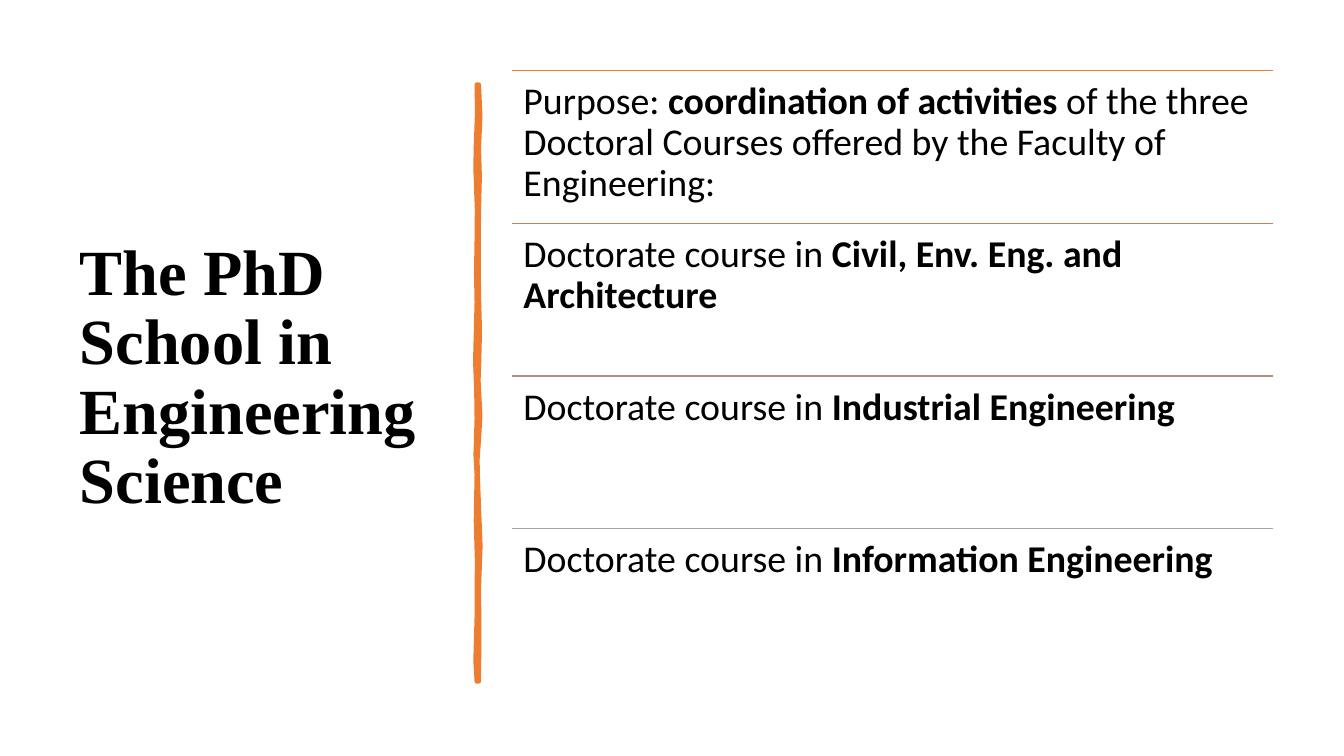
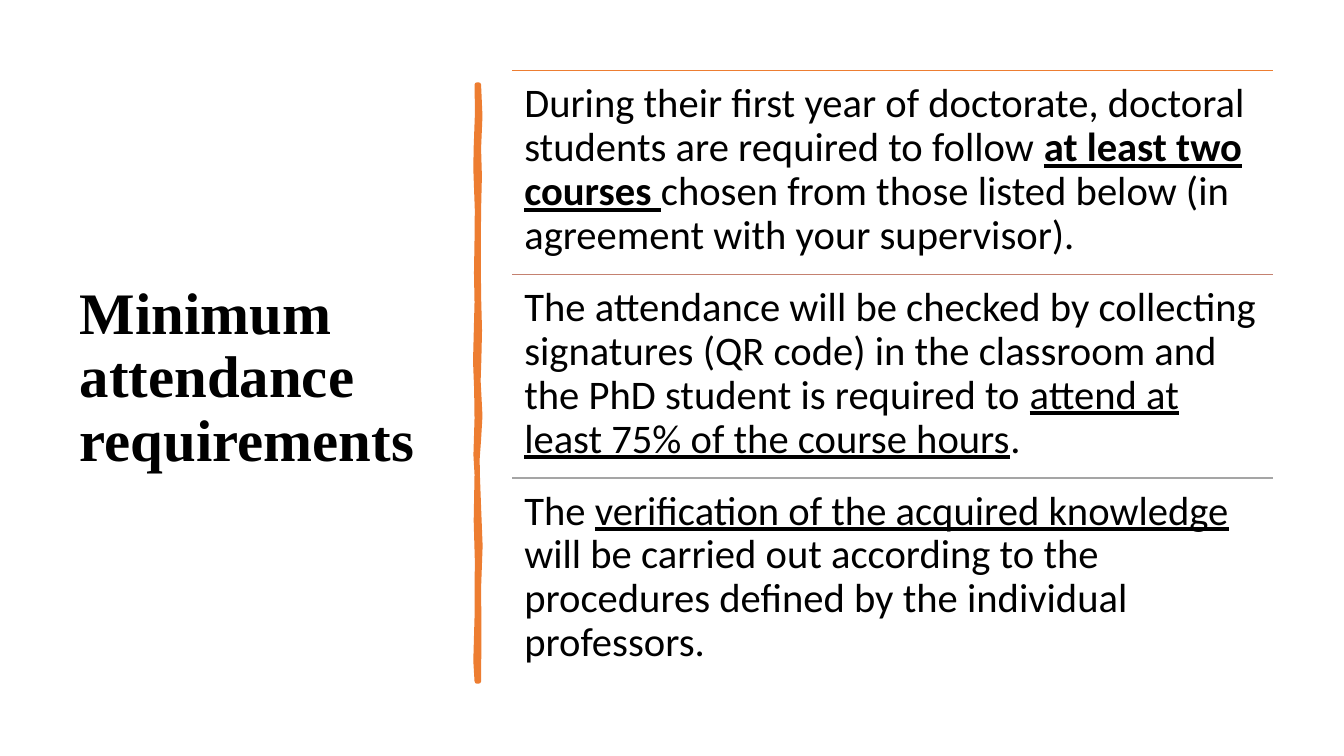
from dataclasses import dataclass

import lxml.etree
import pptx
import pptx.dml.color
import pptx.enum.shapes
import pptx.enum.text
import pptx.oxml.ns
import pptx.presentation
import pptx.shapes.autoshape
import pptx.slide
import pptx.text.text
import pptx.util

Pt = pptx.util.Pt
RGBColor = pptx.dml.color.RGBColor

BLACK = RGBColor(0x00, 0x00, 0x00)
WHITE = RGBColor(0xFF, 0xFF, 0xFF)
ORANGE = RGBColor(0xED, 0x7D, 0x31)
COPPER = RGBColor(0xD1, 0x7B, 0x5C)
CLAY = RGBColor(0xC4, 0x81, 0x70)
ROSE = RGBColor(0xB9, 0x8A, 0x82)
GRAY = RGBColor(0xA5, 0xA5, 0xA5)

TITLE_FONT = "Times New Roman"
BODY_FONT = "Calibri"
BLANK_LAYOUT = 6
LINE_SPACING = 0.9
INSET_RATIO = 0.3

ROWS_LEFT, ROWS_TOP = 365.8, 50.5
ROWS_WIDTH, ROWS_HEIGHT = 543.6, 436.2

BRUSH_RIGHT = [
    (342, 60.5), (343, 83), (342, 106), (342.6, 126), (342, 150), (341.8, 180),
    (342, 211), (342.7, 236), (342.2, 257), (341.7, 272), (343, 297), (342, 314),
    (341, 328), (341.2, 340), (342, 362), (343.1, 390), (342, 420), (342.3, 450),
    (342, 486.7),
]
BRUSH_LEFT = [
    (340.6, 486.7), (339.7, 472), (340.6, 441), (340.8, 400), (340, 372),
    (340.6, 339), (339.8, 325), (340.6, 299), (340.3, 278), (339.5, 258),
    (340.6, 216), (340.2, 195), (340.6, 171), (340.8, 150), (339.7, 120),
    (340, 105), (340.9, 80), (340.6, 60.5),
]


@dataclass(frozen=True)
class Span:
    text: str
    bold: bool = False
    underline: bool = False


@dataclass(frozen=True)
class Row:
    rule_color: RGBColor
    spans: tuple[Span, ...]


@dataclass(frozen=True)
class Page:
    title: str
    title_size: float
    body_size: float
    rows: tuple[Row, ...]


def course_row(rule_color: RGBColor, course: str) -> Row:
    return Row(rule_color, (Span("Doctorate course in "), Span(course, bold=True)))


PAGES = (
    Page("The PhD School in Engineering Science", 46, 27, (
        Row(ORANGE, (
            Span("Purpose: "),
            Span("coordination of activities ", bold=True),
            Span("of the three Doctoral Courses offered by the Faculty of Engineering:"),
        )),
        course_row(COPPER, "Civil, Env. Eng. and Architecture"),
        course_row(ROSE, "Industrial Engineering"),
        course_row(GRAY, "Information Engineering"),
    )),
    Page("Minimum attendance requirements", 42, 29, (
        Row(ORANGE, (
            Span("During their first year of doctorate, doctoral students are "
                 "required to follow "),
            Span("at least two courses ", bold=True, underline=True),
            Span("chosen from those listed below (in agreement with your supervisor)."),
        )),
        Row(CLAY, (
            Span("The attendance will be checked by collecting signatures (QR code) "
                 "in the classroom and the PhD student is required to "),
            Span("attend at least 75% of the course hours", underline=True),
            Span("."),
        )),
        Row(GRAY, (
            Span("The "),
            Span("verification of the acquired knowledge ", underline=True),
            Span("will be carried out according to the procedures defined by the "
                 "individual professors."),
        )),
    )),
)


def add_text(slide: pptx.slide.Slide, left: float, top: float, width: float,
             height: float, spans: tuple[Span, ...], font: str,
             size: float) -> pptx.text.text.TextFrame:
    box = slide.shapes.add_textbox(Pt(left), Pt(top), Pt(width), Pt(height))
    frame = box.text_frame
    frame.word_wrap = True
    para = frame.paragraphs[0]
    para.line_spacing = LINE_SPACING
    for span in spans:
        run = para.add_run()
        run.text = span.text
        run.font.name = font
        run.font.size = Pt(size)
        run.font.color.rgb = BLACK
        run.font.bold = span.bold
        run.font.underline = span.underline
    return frame


def add_title(slide: pptx.slide.Slide, text: str, size: float) -> None:
    frame = add_text(slide, 50, 50.4, 269, 440, (Span(text, bold=True),),
                     TITLE_FONT, size)
    frame.vertical_anchor = pptx.enum.text.MSO_ANCHOR.MIDDLE


def add_brush_stroke(slide: pptx.slide.Slide) -> None:
    start, *outline = [(Pt(x), Pt(y)) for x, y in BRUSH_RIGHT + BRUSH_LEFT]
    builder = slide.shapes.build_freeform(*start, scale=1.0)
    builder.add_line_segments(outline, close=True)
    stroke = builder.convert_to_shape()
    stroke.shadow.inherit = False
    stroke.fill.solid()
    stroke.fill.fore_color.rgb = ORANGE
    stroke.line.color.rgb = ORANGE
    stroke.line.width = Pt(3.25)
    line = stroke.element.spPr.find(pptx.oxml.ns.qn("a:ln"))
    lxml.etree.SubElement(line, pptx.oxml.ns.qn("a:round"))


def add_rule(slide: pptx.slide.Slide, top: float, color: RGBColor) -> None:
    rule = slide.shapes.add_connector(
        pptx.enum.shapes.MSO_CONNECTOR.STRAIGHT,
        Pt(ROWS_LEFT), Pt(top), Pt(ROWS_LEFT + ROWS_WIDTH), Pt(top))
    rule.line.color.rgb = color
    rule.line.width = Pt(1)
    lxml.etree.SubElement(rule.element.spPr, pptx.oxml.ns.qn("a:effectLst"))


def add_rows(slide: pptx.slide.Slide, rows: tuple[Row, ...], size: float) -> None:
    height = ROWS_HEIGHT / len(rows)
    inset = Pt(size * INSET_RATIO)
    for index, row in enumerate(rows):
        top = ROWS_TOP + index * height
        add_rule(slide, top, row.rule_color)
        frame = add_text(slide, ROWS_LEFT, top, ROWS_WIDTH, height, row.spans,
                         BODY_FONT, size)
        frame.margin_left = frame.margin_right = inset
        frame.margin_top = frame.margin_bottom = inset


def add_page(deck: pptx.presentation.Presentation, page: Page) -> None:
    slide = deck.slides.add_slide(deck.slide_layouts[BLANK_LAYOUT])
    slide.background.fill.solid()
    slide.background.fill.fore_color.rgb = WHITE
    add_title(slide, page.title, page.title_size)
    add_brush_stroke(slide)
    add_rows(slide, page.rows, page.body_size)


def main() -> None:
    deck = pptx.Presentation()
    deck.slide_width = Pt(960)
    deck.slide_height = Pt(540)
    for page in PAGES:
        add_page(deck, page)
    deck.save("out.pptx")


if __name__ == "__main__":
    main()
